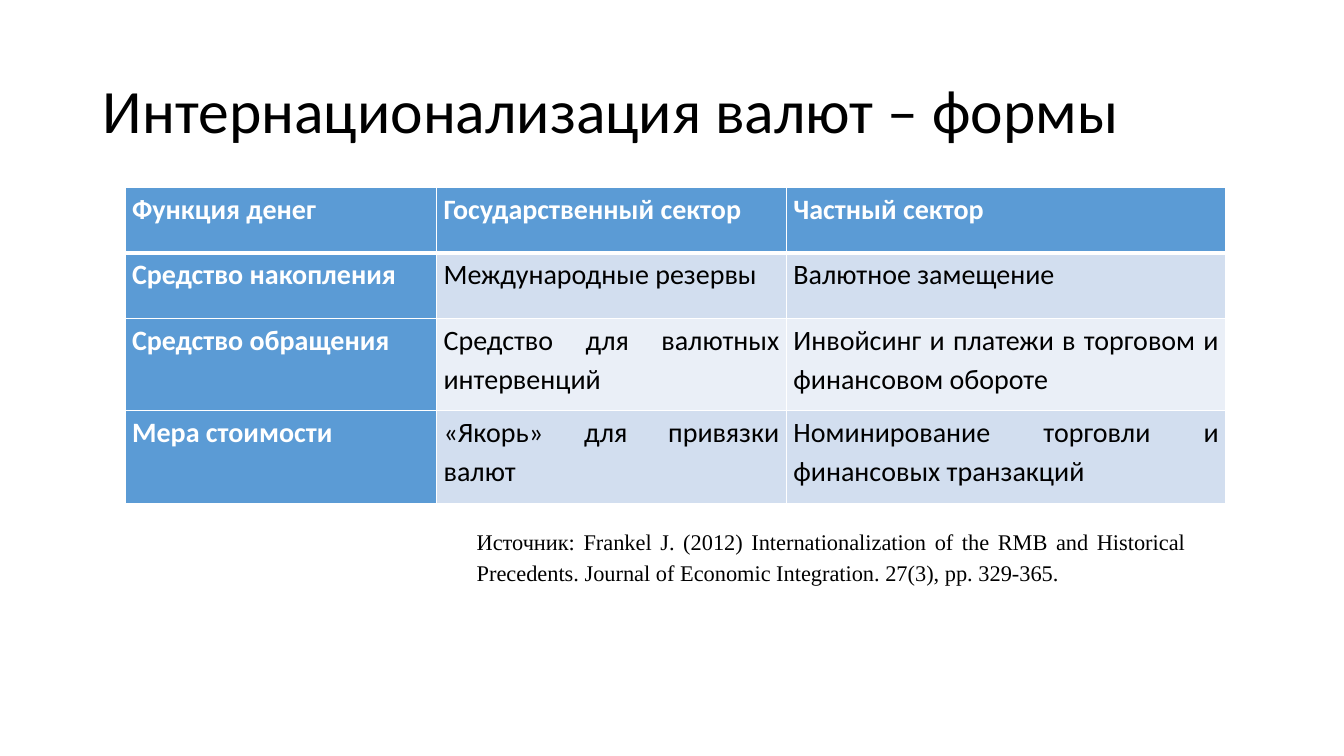
from dataclasses import dataclass

from lxml.etree import SubElement
from pptx import Presentation
from pptx.dml.color import RGBColor as Rgb
from pptx.enum.text import MSO_ANCHOR as Anchor, MSO_AUTO_SIZE as AutoSize, PP_ALIGN as Align
from pptx.oxml.ns import qn
from pptx.util import Pt

PX = 9144  # EMU in one px, 100 px to the inch


@dataclass(frozen=True)
class Theme:
    white: str = "FFFFFF"
    black: str = "000000"
    accent: str = "5B9BD5"
    bands: tuple = ("D2DEEF", "EAEFF7")
    sans: str = "Calibri"
    serif: str = "Times New Roman"
    title_size: int = 44
    table_size: int = 20
    source_size: int = 16
    thin: int = 1
    thick: int = 3


THEME = Theme()

TITLE = "Интернационализация валют – формы"
MONEY_FUNCTIONS = [
    ["Функция денег", "Государственный сектор", "Частный сектор"],
    ["Средство накопления", "Международные резервы", "Валютное замещение"],
    ["Средство обращения", "Средство для валютных интервенций",
     "Инвойсинг и платежи в торговом и финансовом обороте"],
    ["Мера стоимости", "«Якорь» для привязки валют",
     "Номинирование торговли и финансовых транзакций"],
]
COLUMN_WIDTHS = [309, 347, 436]
ROW_HEIGHTS = [65, 65, 91, 93]
SOURCE = ("Источник: Frankel J. (2012) Internationalization of the RMB and Historical "
          "Precedents. Journal of Economic Integration. 27(3), pp. 329-365.")


def emu(lengths):
    return [length * PX for length in lengths]


def set_all(target, values):
    for name, value in values.items():
        setattr(target, name, value)


def write(frame, text, font, size, color, bold=False, **para_format):
    para = frame.paragraphs[0]
    set_all(para, para_format)
    span = para.add_run()
    span.text = text
    set_all(span.font, {"name": font, "size": Pt(size), "bold": bold})
    span.font.color.rgb = Rgb.from_string(color)


def set_borders(cell, widths):
    """Draw white cell borders, widths in points for left, right, top, bottom."""
    props = cell._tc.get_or_add_tcPr()
    for index, (side, width) in enumerate(zip("LRTB", widths)):
        line = SubElement(props, qn(f"a:ln{side}"), w=str(Pt(width)))
        fill = SubElement(line, qn("a:solidFill"))
        SubElement(fill, qn("a:srgbClr"), val=THEME.white)
        props.insert(index, line)


def add_title(page, box):
    title = page.shapes.title
    set_all(title, dict(zip(("left", "top", "width", "height"), emu(box))))
    set_all(title.text_frame, {"vertical_anchor": Anchor.MIDDLE, "word_wrap": True,
                               "auto_size": AutoSize.NONE})
    write(title.text_frame, TITLE, THEME.sans, THEME.title_size, THEME.black,
          alignment=Align.LEFT, line_spacing=0.9)


def format_cell(cell, text, row, column):
    is_head = row == 0 or column == 0
    fill = THEME.accent if is_head else THEME.bands[(row - 1) % 2]
    cell.fill.solid()
    cell.fill.fore_color.rgb = Rgb.from_string(fill)
    set_all(cell, {"margin_left": 7 * PX, "margin_right": 7 * PX,
                   "margin_top": 0, "margin_bottom": 0})
    write(cell.text_frame, text, THEME.sans, THEME.table_size,
          THEME.white if is_head else THEME.black, is_head,
          alignment=Align.JUSTIFY, line_spacing=1.15)
    top = THEME.thick if row == 1 else THEME.thin
    bottom = THEME.thick if row == 0 else THEME.thin
    set_borders(cell, (THEME.thin, THEME.thin, top, bottom))


def add_money_table(page, box):
    table = page.shapes.add_table(len(ROW_HEIGHTS), len(COLUMN_WIDTHS), *emu(box)).table
    table.first_col = True
    for column, width in zip(table.columns, emu(COLUMN_WIDTHS)):
        column.width = width
    for row, height in zip(table.rows, emu(ROW_HEIGHTS)):
        row.height = height
    for row, texts in enumerate(MONEY_FUNCTIONS):
        for column, text in enumerate(texts):
            format_cell(table.cell(row, column), text, row, column)


def add_source(page, box):
    frame = page.shapes.add_textbox(*emu(box)).text_frame
    set_all(frame, {"word_wrap": True, "auto_size": AutoSize.SHAPE_TO_FIT_TEXT})
    write(frame, SOURCE, THEME.serif, THEME.source_size, THEME.black,
          alignment=Align.JUSTIFY, line_spacing=1.15, space_after=Pt(10))


def main():
    deck = Presentation()
    deck.slide_width, deck.slide_height = emu((1333, 750))
    title_only = deck.slide_layouts[5]
    page = deck.slides.add_slide(title_only)
    add_title(page, (92, 40, 1150, 145))
    add_money_table(page, (124, 186, sum(COLUMN_WIDTHS), sum(ROW_HEIGHTS)))
    add_source(page, (463, 515, 723, 72))
    deck.save("out.pptx")


if __name__ == "__main__":
    main()
